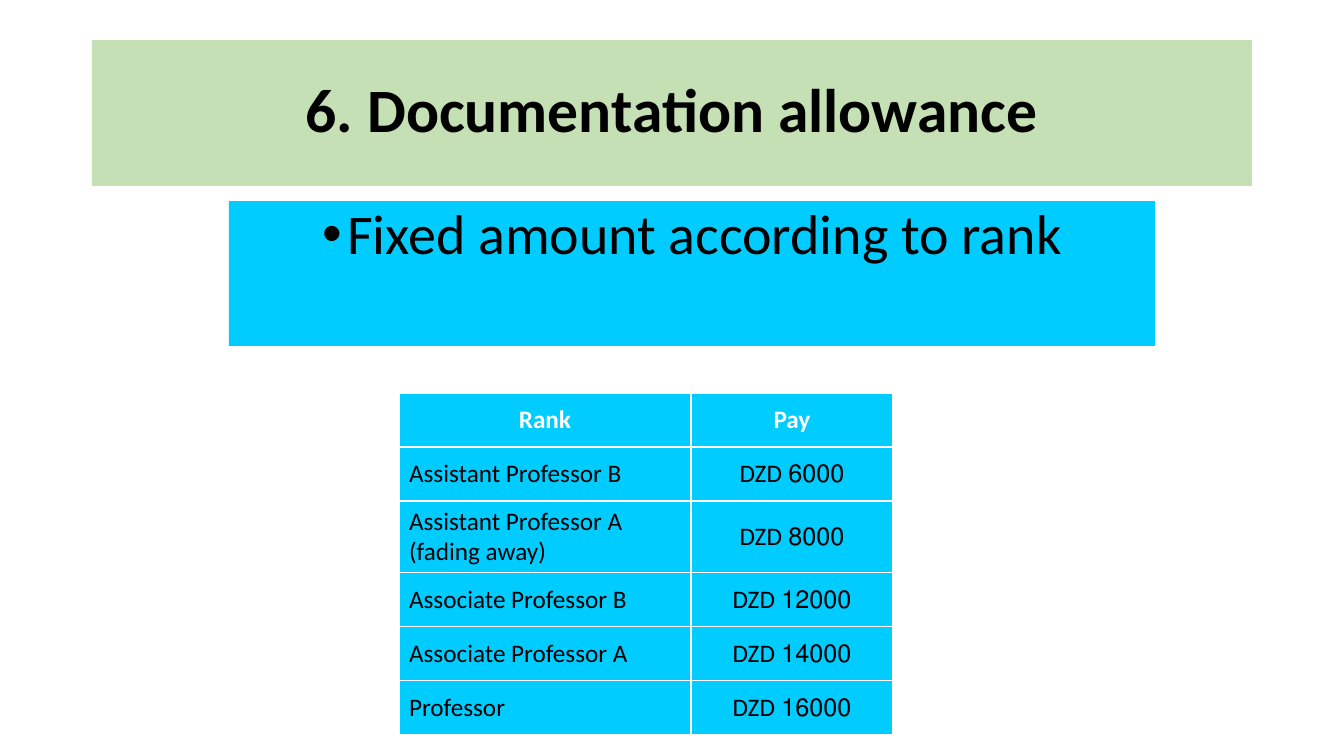
from lxml.etree import SubElement
from pptx import Presentation
from pptx.dml.color import RGBColor
from pptx.enum.text import MSO_ANCHOR, MSO_AUTO_SIZE, PP_ALIGN
from pptx.oxml.ns import qn
from pptx.util import Emu, Pt

FONT = "Calibri"
BLACK, WHITE, GREEN, CYAN = "000000", "FFFFFF", "C5E0B4", "00CCFF"
COLUMN_WIDTHS = (292, 202)
ROW_HEIGHT = 54
ALLOWANCES = (
    ("Rank", "Pay"),
    ("Assistant Professor B", "6000 DZD"),
    ("Assistant Professor A (fading away)", "8000 DZD"),
    ("Associate Professor B", "12000 DZD"),
    ("Associate Professor A", "14000 DZD"),
    ("Professor", "16000 DZD"),
)


def px(length):
    return Emu(round(length * 9144000 / 1008))


def paint(fill, color):
    fill.solid()
    fill.fore_color.rgb = RGBColor.from_string(color)


def add_span(para, text, size, color=BLACK, bold=False):
    span = para.add_run()
    span.text = text
    span.font.name = FONT
    span.font.size = Pt(size)
    span.font.bold = bold
    span.font.color.rgb = RGBColor.from_string(color)


def fill_placeholder(box, place, color, text, size, anchor, hang, bold=False, bullet=None):
    box.left, box.top, box.width, box.height = map(px, place)
    paint(box.fill, color)
    frame = box.text_frame
    frame.word_wrap = True
    frame.auto_size = MSO_AUTO_SIZE.NONE
    frame.vertical_anchor = anchor
    para = frame.paragraphs[0]
    para.alignment = PP_ALIGN.CENTER
    para.line_spacing = 0.9
    para.space_before = Pt(0)
    properties = para._p.get_or_add_pPr()
    properties.set("marL", str(px(hang)))
    properties.set("indent", str(-px(hang)))
    if bullet:
        SubElement(properties, qn("a:buFont"), typeface="Arial")
        SubElement(properties, qn("a:buChar"), char=bullet)
    add_span(para, text, size, bold=bold)


def fill_cell(cell, text, header, centered):
    paint(cell.fill, CYAN)
    cell.vertical_anchor = MSO_ANCHOR.MIDDLE
    para = cell.text_frame.paragraphs[0]
    if centered:
        para.alignment = PP_ALIGN.CENTER
        para._p.get_or_add_pPr().set("rtl", "1")
    add_span(para, text, 18, WHITE if header else BLACK, header)


def add_allowance_table(page, left, top):
    table = page.shapes.add_table(
        len(ALLOWANCES), len(COLUMN_WIDTHS), px(left), px(top),
        px(sum(COLUMN_WIDTHS)), px(ROW_HEIGHT * len(ALLOWANCES)),
    ).table
    table.horz_banding = False
    for column, width in zip(table.columns, COLUMN_WIDTHS):
        column.width = px(width)
    for row_index, values in enumerate(ALLOWANCES):
        table.rows[row_index].height = px(ROW_HEIGHT)
        header = row_index == 0
        for column_index, text in enumerate(values):
            cell = table.cell(row_index, column_index)
            fill_cell(cell, text, header, header or column_index == 1)


def main():
    deck = Presentation()
    deck.slide_width, deck.slide_height = px(1344), px(756)
    page = deck.slides.add_slide(deck.slide_layouts[1])
    title, body = page.placeholders
    fill_placeholder(title, (92, 40, 1160, 146), GREEN, "6. Documentation allowance",
                     44, MSO_ANCHOR.MIDDLE, 56, bold=True)
    fill_placeholder(body, (229, 201, 926, 145), CYAN, "Fixed amount according to rank",
                     40, MSO_ANCHOR.TOP, 25, bullet="•")
    add_allowance_table(page, 399, 393)
    deck.save("out.pptx")


if __name__ == "__main__":
    main()
